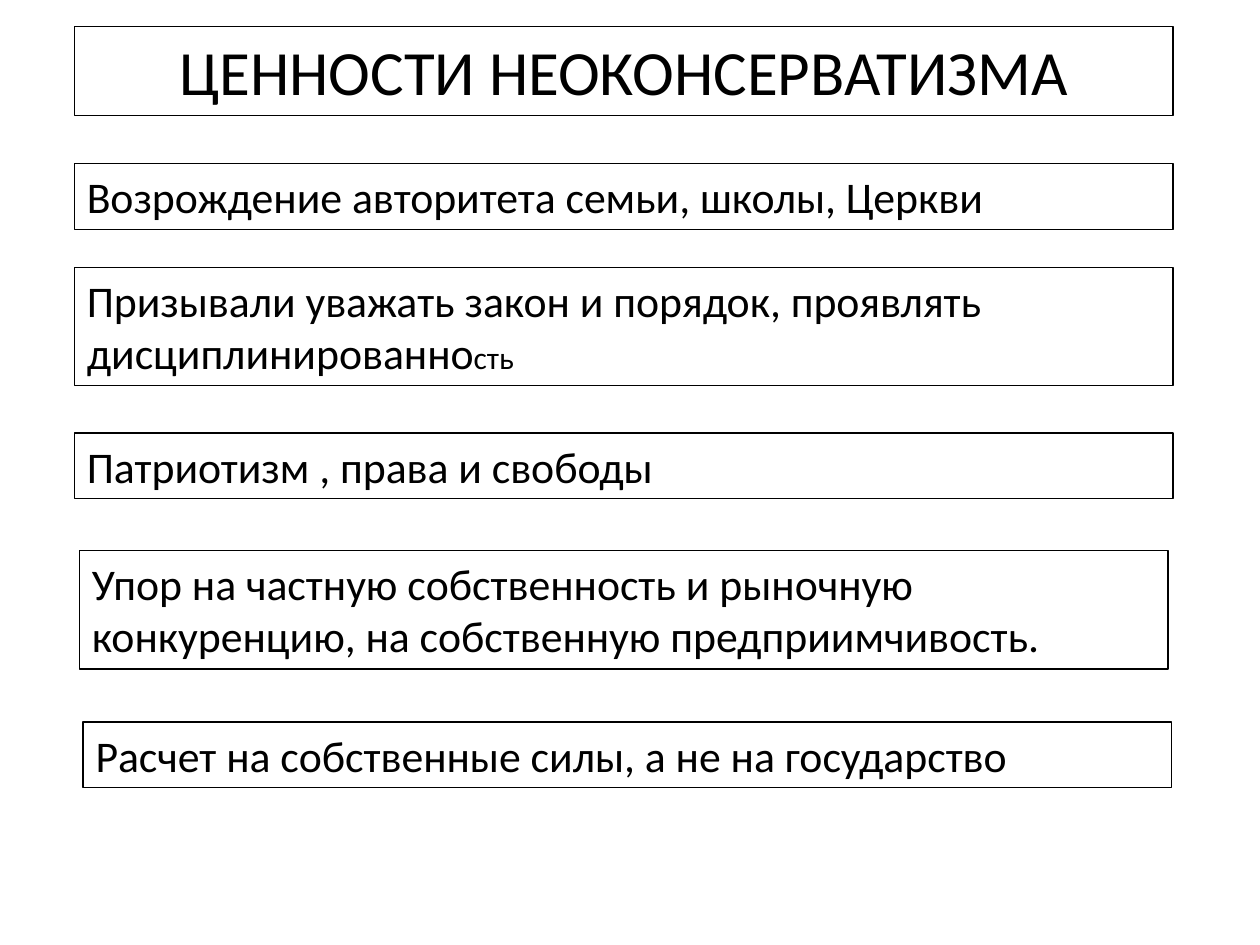
from pptx import Presentation
from pptx.dml.color import RGBColor
from pptx.enum import text
from pptx.util import Pt

BLACK = RGBColor(0, 0, 0)
LEFT, MID = text.PP_ALIGN.LEFT, text.PP_ALIGN.CENTER
ONE, TWO = 37.4, 67.7

deck = Presentation()
deck.slide_width, deck.slide_height = Pt(720), Pt(540)
slide = deck.slides.add_slide(deck.slide_layouts[6])

boxes = [
    (42.5, 15.1, 627.8, 51.1, MID, [("ЦЕННОСТИ НЕОКОНСЕРВАТИЗМА", 36)]),
    (42.5, 93.6, 627.8, ONE, LEFT,
     [("Возрождение авторитета семьи, школы, Церкви", 25)]),
    (42.5, 152.8, 627.8, TWO, LEFT,
     [("Призывали уважать закон и порядок, проявлять дисциплинированно", 25),
      ("сть", 18)]),
    (42.5, 247.5, 627.8, ONE, LEFT, [("Патриотизм , права и свободы", 25)]),
    (45.4, 314.6, 622, TWO, LEFT,
     [("Упор на частную собственность и рыночную конкуренцию, "
       "на собственную предприимчивость.", 25)]),
    (47.5, 412.6, 622, ONE, LEFT,
     [("Расчет на собственные силы, а не на государство", 25)]),
]

for left, top, width, height, align, parts in boxes:
    box = slide.shapes.add_textbox(Pt(left), Pt(top), Pt(width), Pt(height))
    box.line.color.rgb = BLACK
    box.line.width = Pt(0.75)
    frame = box.text_frame
    look = {"word_wrap": True, "auto_size": text.MSO_AUTO_SIZE.SHAPE_TO_FIT_TEXT}
    for key, value in look.items():
        setattr(frame, key, value)
    para = frame.paragraphs[0]
    para.alignment = align
    for words, size in parts:
        run = para.add_run()
        run.text = words
        for key, value in {"name": "Calibri", "size": Pt(size)}.items():
            setattr(run.font, key, value)
        run.font.color.rgb = BLACK

deck.save("out.pptx")
